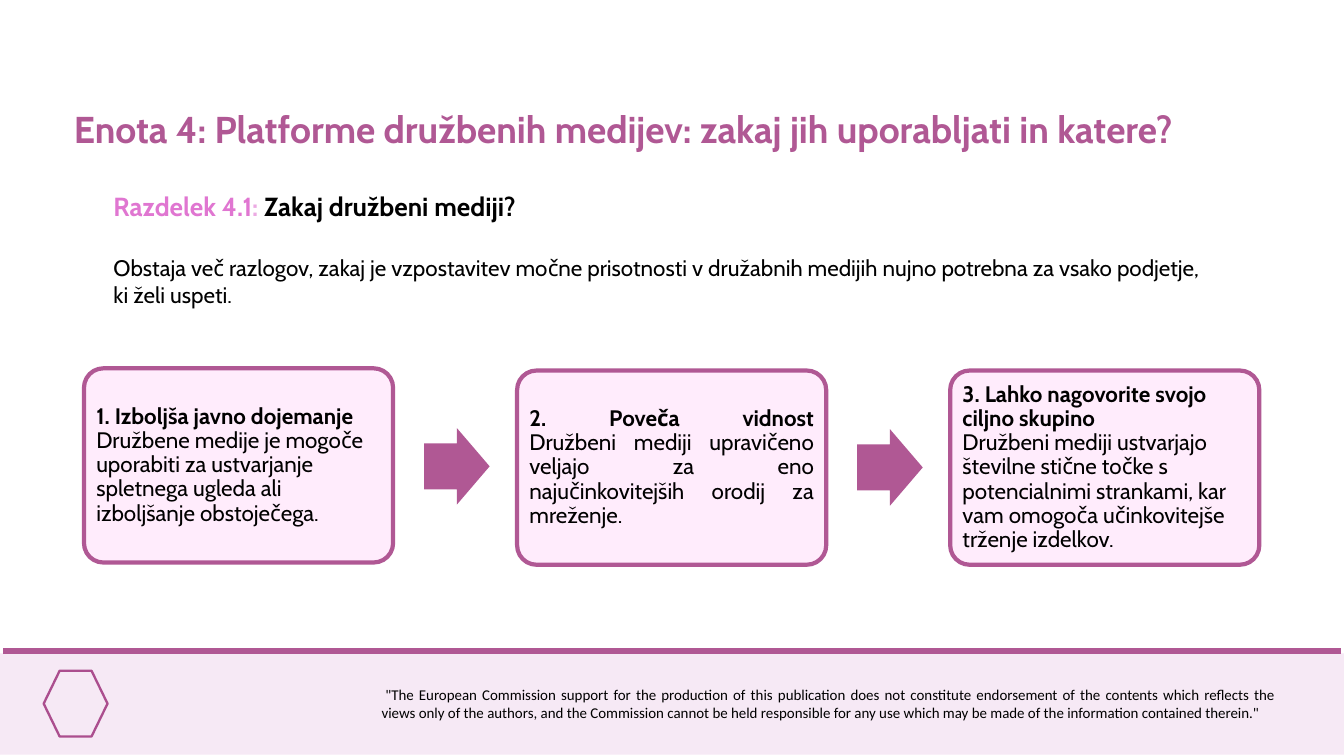
from pptx import Presentation
from pptx import util as u
from pptx.dml.color import RGBColor
from pptx.enum import shapes, text

Pt = u.Pt
COLOURS = {
    "plum": "B05894", "mark": "AB4E8E", "footer": "F6E9F5", "card": "FFECFC",
    "pink": "E076D1", "pale_pink": "ECAAE3", "black": "000000",
}
TITLE = "Enota 4: Platforme družbenih medijev: zakaj jih uporabljati in katere?"
SECTION = [("Razdelek 4.1", "pink"), (": ", "pale_pink"),
           ("Zakaj družbeni mediji?", "black")]
INTRO = ("Obstaja več razlogov, zakaj je vzpostavitev močne prisotnosti v družabnih "
         "medijih nujno potrebna za vsako podjetje, ki želi uspeti.")
LEFT, JUSTIFY = text.PP_ALIGN.LEFT, text.PP_ALIGN.JUSTIFY
# heading, body, alignment, offset from the top of the row
REASONS = [
    ("1. Izboljša javno dojemanje",
     "Družbene medije je mogoče uporabiti za ustvarjanje spletnega ugleda ali "
     "izboljšanje obstoječega.", LEFT, 0),
    ("2. Poveča vidnost",
     "Družbeni mediji upravičeno veljajo za eno najučinkovitejših orodij za mreženje.",
     JUSTIFY, 2.4),
    ("3. Lahko nagovorite svojo ciljno skupino",
     "Družbeni mediji ustvarjajo številne stične točke s potencialnimi strankami, kar "
     "vam omogoča učinkovitejše trženje izdelkov.", LEFT, 2.4),
]
DISCLAIMER = ('"The European Commission support for the production of this publication '
              "does not constitute endorsement of the contents which reflects the views "
              "only of the authors, and the Commission cannot be held responsible for any "
              'use which may be made of the information contained therein."')


def colour(name):
    return RGBColor.from_string(COLOURS[name])


def style(run, size, name="black", bold=False, font="Cabin"):
    run.font.size, run.font.bold, run.font.name = Pt(size), bold, font
    run.font.color.rgb = colour(name)


def add_box(slide, kind, box, fill, line=None, width=0):
    """Add a filled preset shape; box is left, top, width, height in points."""
    shape = slide.shapes.add_shape(kind, *map(Pt, box))
    shape.shadow.inherit = False
    shape.fill.solid()
    shape.fill.fore_color.rgb = colour(fill)
    if line:
        shape.line.color.rgb = colour(line)
        shape.line.width = Pt(width)
    else:
        shape.line.fill.background()
    return shape


def add_text_frame(slide, box):
    frame = slide.shapes.add_textbox(*map(Pt, box)).text_frame
    frame.word_wrap = True
    return frame


def add_footer(slide, left, top, width, height):
    add_box(slide, shapes.MSO_SHAPE.RECTANGLE, (left, top, width, height), "footer")
    rule_y = Pt(top - 2.2)
    rule = slide.shapes.add_connector(shapes.MSO_CONNECTOR.STRAIGHT,
                                      Pt(left + 3.6), rule_y, Pt(left + width - 3.6), rule_y)
    rule.line.color.rgb = colour("plum")
    rule.line.width = Pt(6.75)
    rule._element.spPr.get_or_add_effectLst() if hasattr(
        rule._element.spPr, "get_or_add_effectLst") else None
    add_box(slide, shapes.MSO_SHAPE.HEXAGON, (left + 46.8, top + 18.7, 68.4, 70.4),
            "footer", "mark", 2.5)

    frame = add_text_frame(slide, (left + 401.8, top + 31, 972, 46))
    frame.text = DISCLAIMER
    paragraph = frame.paragraphs[0]
    paragraph.alignment = JUSTIFY
    paragraph._p.get_or_add_pPr().set("indent", str(Pt(4)))
    style(paragraph.runs[0], 16, font="Calibri")


def add_title(slide, box):
    frame = add_text_frame(slide, box)
    frame.text = TITLE
    style(frame.paragraphs[0].runs[0], 40, "plum", True)


def add_introduction(slide, box):
    frame = add_text_frame(slide, box)
    for words, name in SECTION:
        run = frame.paragraphs[0].add_run()
        run.text = words
        style(run, 28, name, True)
    paragraph = frame.add_paragraph()
    paragraph.text = INTRO
    paragraph.space_before = Pt(34)
    style(paragraph.runs[0], 24)


def add_card(slide, left, top, width, height, heading, body, alignment):
    card = add_box(slide, shapes.MSO_SHAPE.ROUNDED_RECTANGLE,
                   (left, top, width, height), "card", "plum", 4.5)
    card.adjustments[0] = 0.1
    frame = card.text_frame
    frame.word_wrap = True
    frame.vertical_anchor = text.MSO_ANCHOR.MIDDLE
    frame.margin_left = frame.margin_right = Pt(7.2)
    frame.margin_top = frame.margin_bottom = Pt(7.2)
    paragraph = frame.paragraphs[0]
    paragraph.text = f"{heading}\v{body}"
    paragraph.alignment = alignment
    paragraph.line_spacing = 0.9
    for run, bold in zip(paragraph.runs, (True, False)):
        style(run, 24, bold=bold)


def add_reasons(slide, left, top, width, height):
    """Lay the cards out at equal steps, with an arrow in each gap."""
    card_width, arrow_width, arrow_height = 331.2, 70.2, 82
    step = (width - card_width) / (len(REASONS) - 1)
    for index, (heading, body, alignment, offset) in enumerate(REASONS):
        x = left + index * step
        add_card(slide, x, top + offset, card_width, height, heading, body, alignment)
        if index < len(REASONS) - 1:
            arrow = add_box(slide, shapes.MSO_SHAPE.RIGHT_ARROW,
                            (x + card_width + 33.2, top + offset / 2 + (height - arrow_height) / 2 + 1,
                             arrow_width, arrow_height), "plum")
            arrow.adjustments[0], arrow.adjustments[1] = 0.6, 0.5


def main():
    presentation = Presentation()
    presentation.slide_width, presentation.slide_height = Pt(1440), Pt(810)
    slide = presentation.slides.add_slide(presentation.slide_layouts[6])
    add_footer(slide, 0, 700, 1440, 108.6)
    add_title(slide, (72, 110.2, 1259.3, 55.4))
    add_introduction(slide, (114.5, 200.9, 1181.5, 133.2))
    add_reasons(slide, 90, 394.6, 1259.3, 208.1)
    presentation.save("out.pptx")


if __name__ == "__main__":
    main()
